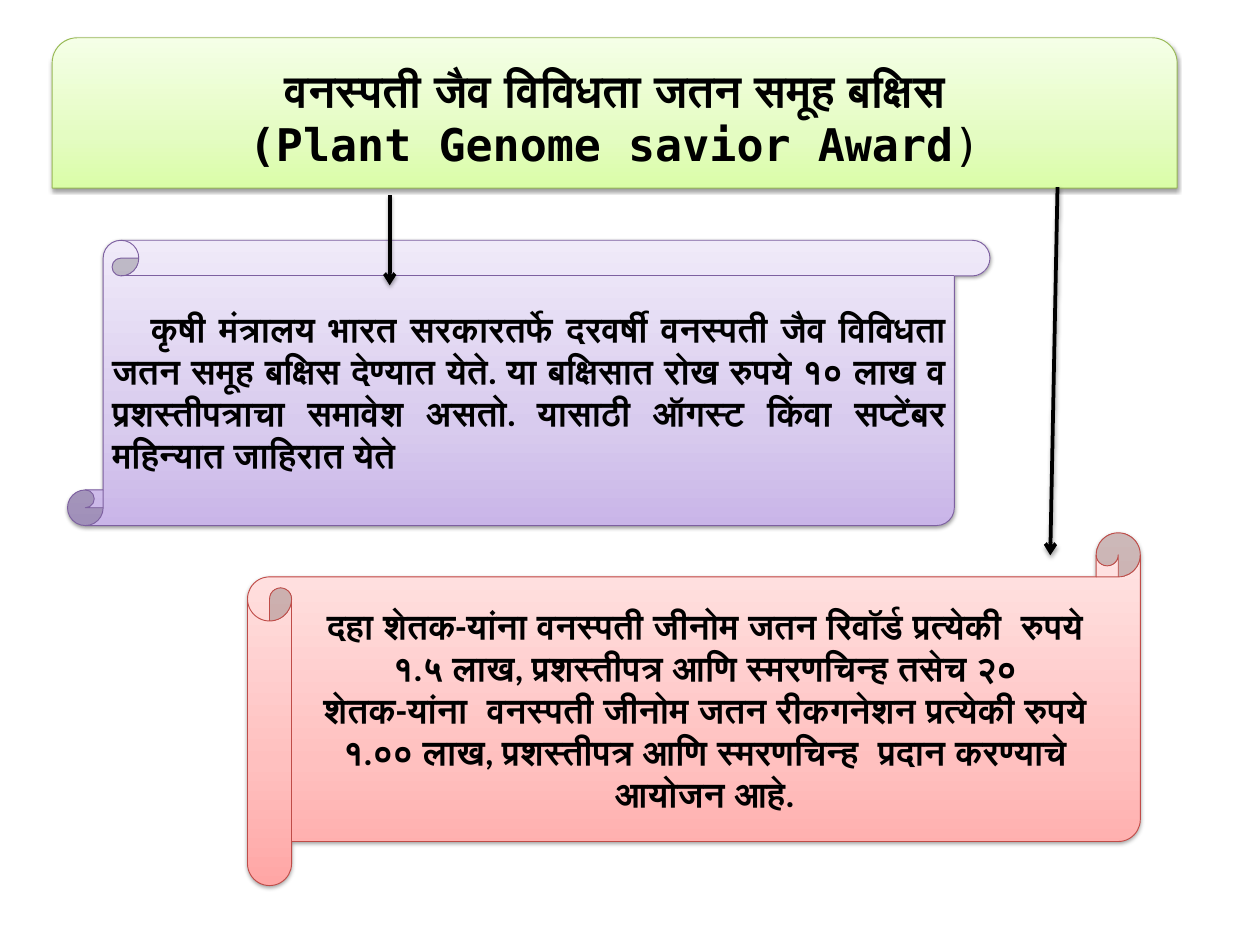
"""Build the plant genome award slide: a heading with arrows to two scrolls."""
from lxml import etree
from pptx import Presentation
from pptx.dml.color import RGBColor
from pptx.enum import shapes, text
from pptx.oxml import ns, parse_xml
from pptx.util import Inches, Pt

BLACK = RGBColor(0, 0, 0)
GREEN = RGBColor(0x98, 0xB9, 0x55)
PURPLE = RGBColor(0x7D, 0x60, 0xA0)
RED = RGBColor(0xBF, 0x4C, 0x48)
GREENS = [RGBColor(0xDA, 0xFD, 0xA7), RGBColor(0xE4, 0xFC, 0xC2), RGBColor(0xF5, 0xFF, 0xE7)]
PURPLES = [RGBColor(0xC9, 0xB5, 0xE8), RGBColor(0xD8, 0xCB, 0xEE), RGBColor(0xF0, 0xEA, 0xF9)]
REDS = [RGBColor(0xFF, 0xA6, 0xA5), RGBColor(0xFF, 0xC0, 0xBF), RGBColor(0xFF, 0xE7, 0xE7)]
STOPS = (0, 35, 100)

PRESET = shapes.MSO_SHAPE
ALIGN = text.PP_ALIGN
PANELS = [
    dict(kind=PRESET.ROUND_2_SAME_RECTANGLE, place=(0.58, 0.42, 12.5, 1.67),
         fill=GREENS, line=GREEN, font="DejaVu Sans Mono", size=36,
         align=ALIGN.CENTER, indent=0,
         paragraphs=[[("वनस्पती जैव विविधता जतन समूह बक्षिस", True)],
                     [("(Plant Genome savior Award", True), (")", False)]]),
    dict(kind=PRESET.VERTICAL_SCROLL, place=(0.75, 2.67, 10.25, 3.17),
         fill=PURPLES, line=PURPLE, font="Calibri", size=28,
         align=ALIGN.JUSTIFY, indent=0.43,
         paragraphs=[[("कृषी मंत्रालय भारत सरकारतर्फे दरवर्षी वनस्पती जैव विविधता जतन समूह बक्षिस "
                       "देण्यात येते. या बक्षिसात रोख रुपये १० लाख व प्रशस्तीपत्राचा समावेश असतो. "
                       "यासाठी ऑगस्ट किंवा सप्टेंबर महिन्यात जाहिरात येते", True)]]),
    dict(kind=PRESET.HORIZONTAL_SCROLL, place=(2.75, 5.92, 9.92, 3.92),
         fill=REDS, line=RED, font="Calibri", size=28,
         align=ALIGN.CENTER, indent=0,
         paragraphs=[[("दहा शेतक-यांना वनस्पती जीनोम जतन रिवॉर्ड प्रत्येकी  रुपये १.५ लाख, "
                       "प्रशस्तीपत्र आणि स्मरणचिन्ह तसेच २०", True)],
                     [("शेतक-यांना  वनस्पती जीनोम जतन रीकगनेशन प्रत्येकी रुपये १.०० लाख, "
                       "प्रशस्तीपत्र आणि स्मरणचिन्ह  प्रदान करण्याचे आयोजन आहे.", True)]]),
]
ARROWS = [(11.75, 2.08, 11.67, 6.17), (4.33, 2.17, 4.33, 3.17)]


def add_shadow(shape, opacity, distance):
    shape._element.spPr.append(parse_xml(
        f'<a:effectLst {ns.nsdecls("a")}><a:outerShdw blurRad="{Pt(3.1)}" dist="{Pt(distance)}" '
        f'dir="5400000" rotWithShape="0"><a:srgbClr val="{BLACK}">'
        f'<a:alpha val="{opacity * 1000}"/></a:srgbClr></a:outerShdw></a:effectLst>'))


def fill_gradient(shape, colours):
    stops = "".join(f'<a:gs pos="{stop * 1000}"><a:srgbClr val="{colour}"/></a:gs>'
                    for stop, colour in zip(STOPS, colours))
    shape.fill.gradient()
    gradient = shape._element.spPr.find(ns.qn("a:gradFill"))
    gradient.getparent().replace(gradient, parse_xml(
        f'<a:gradFill {ns.nsdecls("a")} rotWithShape="1"><a:gsLst>{stops}</a:gsLst>'
        '<a:lin ang="16200000" scaled="0"/></a:gradFill>'))


def add_panel(page, panel):
    box = page.shapes.add_shape(panel["kind"], *map(Inches, panel["place"]))
    fill_gradient(box, panel["fill"])
    box.line.color.rgb = panel["line"]
    box.line.width = Pt(0.75)
    add_shadow(box, 38, 1.6)
    frame = box.text_frame
    frame.word_wrap = True
    frame.vertical_anchor = text.MSO_ANCHOR.MIDDLE
    frame.text = "\n".join("".join(words for words, bold in spans) for spans in panel["paragraphs"])
    for para, spans in zip(frame.paragraphs, panel["paragraphs"]):
        para.alignment = panel["align"]
        if panel["indent"]:
            para._p.get_or_add_pPr().set("indent", str(Inches(panel["indent"])))
        para.runs[0].text = spans[0][0]
        for words, bold in spans[1:]:
            para.add_run().text = words
        for span, (words, bold) in zip(para.runs, spans):
            span.font.name = panel["font"]
            span.font.size = Pt(panel["size"])
            span.font.bold = bold
            span.font.color.rgb = BLACK


def add_arrow(page, ends):
    arrow = page.shapes.add_connector(shapes.MSO_CONNECTOR.STRAIGHT, *map(Inches, ends))
    arrow.line.color.rgb = BLACK
    arrow.line.width = Pt(3)
    etree.SubElement(arrow.line._get_or_add_ln(), ns.qn("a:tailEnd"), type="arrow")
    add_shadow(arrow, 35, 1.8)


def main():
    deck = Presentation()
    deck.slide_width, deck.slide_height = Inches(14), Inches(10.5)
    page = deck.slides.add_slide(deck.slide_layouts[6])
    for panel in PANELS:
        add_panel(page, panel)
    for ends in ARROWS:
        add_arrow(page, ends)
    deck.save("out.pptx")


if __name__ == "__main__":
    main()
